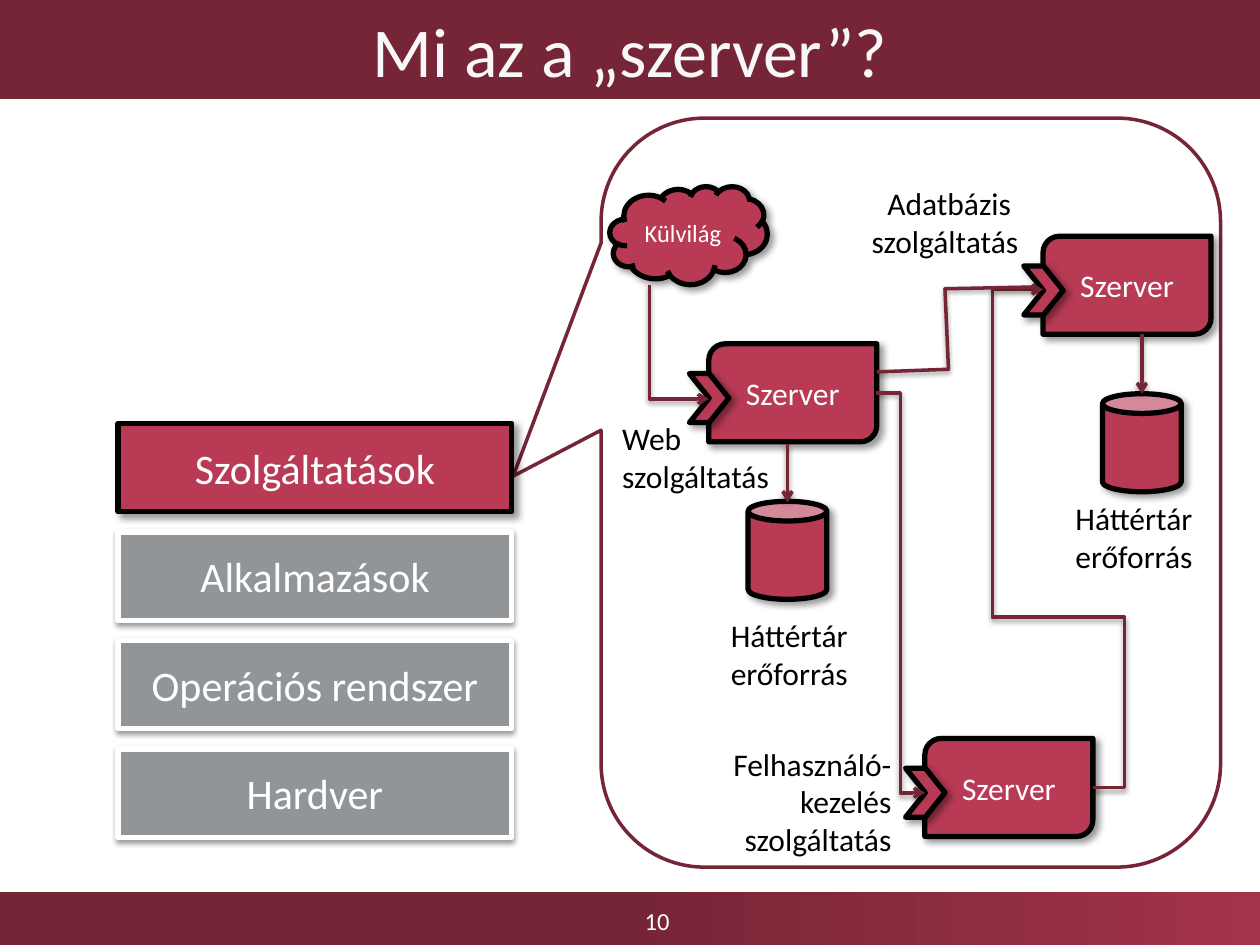
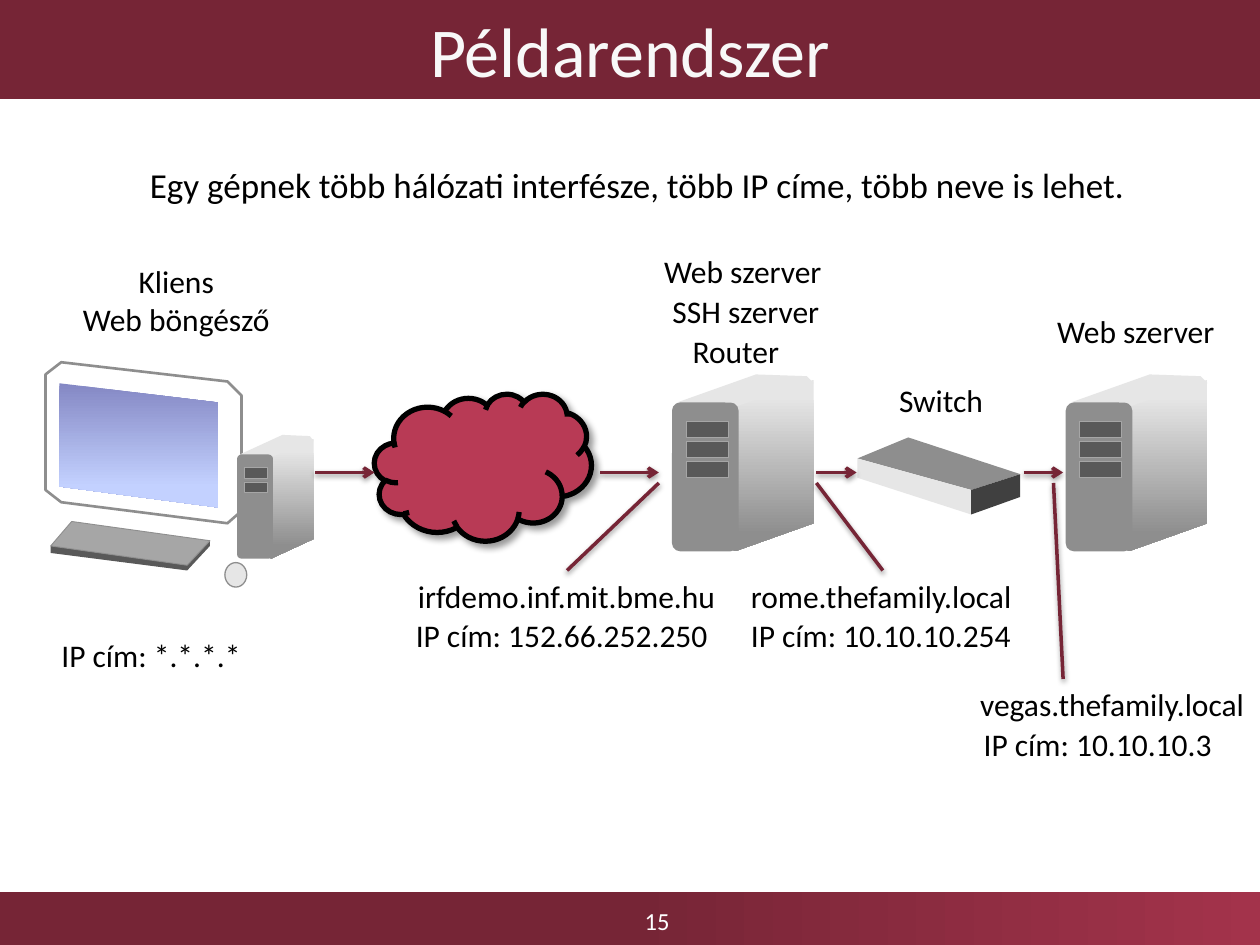
from pptx import Presentation
from pptx.dml.color import RGBColor
from pptx.enum.shapes import MSO_CONNECTOR, MSO_SHAPE
from pptx.enum.text import MSO_ANCHOR, MSO_AUTO_SIZE, PP_ALIGN
from pptx.oxml import parse_xml
from pptx.oxml.ns import nsdecls, qn
from pptx.util import Pt

RECT, ROUND_RECT = MSO_SHAPE.RECTANGLE, MSO_SHAPE.ROUNDED_RECTANGLE
DIAGONAL, CHEVRON = MSO_SHAPE.ROUND_2_DIAG_RECTANGLE, MSO_SHAPE.CHEVRON
CAN, CLOUD, OVAL = MSO_SHAPE.CAN, MSO_SHAPE.CLOUD, MSO_SHAPE.OVAL
CALLOUT = MSO_SHAPE.ROUNDED_RECTANGULAR_CALLOUT
STRAIGHT, ELBOW = MSO_CONNECTOR.STRAIGHT, MSO_CONNECTOR.ELBOW
LEFT, CENTER, RIGHT = PP_ALIGN.LEFT, PP_ALIGN.CENTER, PP_ALIGN.RIGHT
MIDDLE, GROW = MSO_ANCHOR.MIDDLE, MSO_AUTO_SIZE.SHAPE_TO_FIT_TEXT

WINE = RGBColor(0x76, 0x25, 0x36)
LIGHT_WINE = RGBColor(0xA3, 0x33, 0x4B)
RED = RGBColor(0xB8, 0x3A, 0x55)
BLACK = RGBColor(0, 0, 0)
WHITE = RGBColor(0xFF, 0xFF, 0xFF)
TITLE_WHITE = RGBColor(0xF8, 0xF8, 0xF8)
LAYER_GRAY = RGBColor(0x92, 0x95, 0x98)
PALE_GRAY = RGBColor(0xE6, 0xE6, 0xE6)
MID_GRAY = RGBColor(0xA6, 0xA6, 0xA6)
FACE_GRAY = RGBColor(0x8E, 0x8E, 0x8E)
DARK_GRAY = RGBColor(0x59, 0x59, 0x59)
EDGE_GRAY = RGBColor(0x40, 0x40, 0x40)
SCREEN_TOP = RGBColor(0x84, 0x88, 0xC4)
SCREEN_BOTTOM = RGBColor(0xC3, 0xD1, 0xFF)

# Gradients: colour and position of both stops, and the angle
FOOTER_FILL = {"stops": ((WINE, 0.5), (LIGHT_WINE, 1)), "angle": 0}
SCREEN_FILL = {"stops": ((SCREEN_TOP, 0), (SCREEN_BOTTOM, 0.83)), "angle": 270}
SIDE_FILL = {"stops": ((PALE_GRAY, 0.1), (FACE_GRAY, 0.9)), "angle": 270}

# Shadows: opacity, blur, distance, direction
SHADOW_XML = (f'<a:effectLst {nsdecls("a")}><a:outerShdw blurRad="%d" dist="%d" dir="%d" '
              'rotWithShape="0"><a:srgbClr val="000000"><a:alpha val="%d"/></a:srgbClr>'
              '</a:outerShdw></a:effectLst>')
DEEP_SHADOW = SHADOW_XML % (Pt(4), Pt(3), 45 * 60000, 40000)
SOFT_SHADOW = SHADOW_XML % (Pt(3.1), Pt(1.6), 90 * 60000, 38000)
RED_BOX = {"fill": RED, "line": (BLACK, 3), "shadow": DEEP_SHADOW}
GRAY_BOX = {"fill": LAYER_GRAY, "line": (WHITE, 3), "shadow": SOFT_SHADOW}
FONT = "Calibri"


def place(page, kind, area, fill=None, line=None, shadow=None, text="",
          size=18, color=WHITE, align=CENTER, closed=True):
    """Add a preset shape, a freeform (kind "outline") or a label (kind "label")."""
    if kind == "outline":
        corners = [(Pt(x), Pt(y)) for x, y in area]
        builder = page.shapes.build_freeform(*corners[0])
        builder.add_line_segments(corners[1:], close=closed)
        box = builder.convert_to_shape()
    elif kind == "label":
        box = page.shapes.add_textbox(*map(Pt, area))
    else:
        box = page.shapes.add_shape(kind, *map(Pt, area))

    if fill is None:
        box.fill.background()
    elif isinstance(fill, RGBColor):
        box.fill.solid()
        box.fill.fore_color.rgb = fill
    else:
        box.fill.gradient()
        box.fill.gradient_angle = fill["angle"]
        for stop, (tone, position) in zip(box.fill.gradient_stops, fill["stops"]):
            stop.color.rgb, stop.position = tone, position
    if line:
        box.line.color.rgb, box.line.width = line[0], Pt(line[1])
    else:
        box.line.fill.background()
    if shadow:
        box._element.spPr.append(parse_xml(shadow))
    else:
        box.shadow.inherit = False

    if text:
        frame = box.text_frame
        if kind == "label":
            frame.word_wrap, frame.auto_size = False, GROW
        else:
            frame.word_wrap, frame.vertical_anchor = True, MIDDLE
        for number, words in enumerate(text.split("\n")):
            para = frame.add_paragraph() if number else frame.paragraphs[0]
            para.text, para.alignment = words, align
            for span in para.runs:
                for name, value in {"name": FONT, "size": Pt(size)}.items():
                    setattr(span.font, name, value)
                span.font.color.rgb = color
    return box


def link(page, kind, start, end, arrow=True):
    """Add a shadowed connector, with an arrowhead at its end if wanted."""
    connector = page.shapes.add_connector(kind, *map(Pt, start + end))
    connector.line.color.rgb, connector.line.width = WINE, Pt(2)
    properties = connector._element.spPr
    if arrow:
        properties.find(qn("a:ln")).append(
            parse_xml(f'<a:tailEnd {nsdecls("a")} type="arrow"/>'))
    properties.append(parse_xml(SOFT_SHADOW))
    return properties


deck = Presentation()
deck.slide_width, deck.slide_height = Pt(720), Pt(540)

# Shared bands, titles and page numbers
pages = []
for title, number in (("Mi az a „szerver”?", "10"), ("Példarendszer", "15")):
    page = deck.slides.add_slide(deck.slide_layouts[6])
    place(page, RECT, (0, 510, 720, 30), FOOTER_FILL)
    place(page, RECT, (258.5, 512, 234, 28), text=number, size=14)
    place(page, RECT, (0, 0, 720, 56.5), WINE, text=title, size=40, color=TITLE_WHITE)
    pages.append(page)
server_page, example_page = pages

# Callout that opens from the services layer
callout = place(server_page, CALLOUT, (343.5, 67.5, 354, 428), WHITE, (WINE, 2))
for index, value in enumerate((-0.642, -0.022, 0.167)):
    callout.adjustments[index] = value

# Layer stack
layers = ("Szolgáltatások", "Alkalmazások", "Operációs rendszer", "Hardver")
for row, layer in enumerate(layers):
    style = GRAY_BOX if row else RED_BOX
    place(server_page, RECT, (67.5, 242 + 62 * row, 225, 50.5), text=layer, size=24, **style)

# Servers with their service ports, and the storage cans
for left, top in ((405, 196.5), (596, 135), (528.5, 422)):
    place(server_page, DIAGONAL, (left, top, 96, 56), text="Szerver", **RED_BOX)
    place(server_page, CHEVRON, (left - 11, top + 17, 22.5, 28), **RED_BOX)
for left, top in ((427.5, 286.5), (630, 225)):
    place(server_page, CAN, (left, top, 45, 56), **RED_BOX)
place(server_page, CLOUD, (348.5, 106.5, 90, 56), text="Külvilág", size=14, **RED_BOX)

# Storage arrows and routes between servers
link(server_page, STRAIGHT, (652.5, 191), (652.5, 225))
link(server_page, STRAIGHT, (450, 253.5), (450, 287))
link(server_page, ELBOW, (500.5, 224.5), (528.5, 453))

cloud_route = link(server_page, ELBOW, (420.5, 178.5), (355.5, 212.5))
cloud_route.find(qn("a:xfrm")).set("rot", str(270 * 60000))
cloud_route.find(qn("a:prstGeom")).set("prst", "bentConnector2")

return_route = link(server_page, ELBOW, (624.5, 450), (596, 165.5))
geometry = return_route.find(qn("a:prstGeom"))
geometry.set("prst", "bentConnector5")
for old_guides in geometry.findall(qn("a:avLst")):
    geometry.remove(old_guides)
guides = "".join(f'<a:gd name="adj{index}" fmla="val {value}"/>'
                 for index, value in enumerate((-64000, 34200, 201500), 1))
geometry.append(parse_xml(f'<a:avLst {nsdecls("a")}>{guides}</a:avLst>'))

place(server_page, "outline", [(501, 212.5), (542, 211), (540, 165), (590.5, 164)],
      line=(WINE, 2), shadow=SOFT_SHADOW, closed=False)

# Service and resource labels
for area, text, align in (
    ((348.5, 236, 99.5, 51), "Web \vszolgáltatás", LEFT),
    ((489.5, 101.5, 99.5, 51), "Adatbázis \vszolgáltatás", RIGHT),
    ((410.5, 422, 106, 73), "Felhasználó-\nkezelés\nszolgáltatás", RIGHT),
    ((410.5, 348.5, 86.5, 51), "Háttértár \verőforrás", LEFT),
    ((607.5, 281.5, 86.5, 51), "Háttértár \verőforrás", LEFT),
):
    place(server_page, "label", area, text=text, color=BLACK, align=align)

# Client monitor, keyboard and mouse
for outline, fill, line in (
    ([(26, 214), (35, 207), (130, 218), (138, 226),
      (138, 292), (130, 299), (35, 287), (26, 280)], WHITE, (FACE_GRAY, 1.5)),
    ([(34, 219), (125, 230), (125, 290), (34, 278)], SCREEN_FILL, None),
    ([(29, 312), (107, 323), (120, 309), (120, 312), (107, 326), (29, 316)], DARK_GRAY, None),
    ([(41, 298), (120, 309), (107, 323), (29, 312)], MID_GRAY, (FACE_GRAY, 0.5)),
):
    place(example_page, "outline", outline, fill, line)
place(example_page, OVAL, (128.5, 321.5, 12.5, 14), PALE_GRAY, (FACE_GRAY, 0.75))

# Towers, drawn on an 81 by 101 grid and scaled
for left, top, across, down, drives in (
    (384, 214, 1, 1, 3), (609, 214, 1, 1, 3), (135.5, 248.5, 0.54, 0.7, 2),
):
    for outline, fill in (
        ([(3, 16), (48, 0), (77, 1), (81, 5), (38, 22)], PALE_GRAY),
        ([(30, 20), (38, 18), (81, 3), (81, 85), (36, 101), (30, 95)], SIDE_FILL),
    ):
        corners = [(left + x * across, top + y * down) for x, y in outline]
        place(example_page, "outline", corners, fill)
    front = place(example_page, ROUND_RECT,
                  (left, top + 16 * down, 38 * across, 85 * down), FACE_GRAY)
    front.adjustments[0] = 0.12
    for drive in range(drives):
        place(example_page, RECT,
              (left + 8 * across, top + (27 + 11.5 * drive) * down, 24 * across, 9 * down),
              DARK_GRAY, (MID_GRAY, 0.5))

# Network cloud and switch
place(example_page, CLOUD, (214, 225, 124, 84), **RED_BOX)
for outline, fill in (
    ([(490, 262), (519, 250), (583, 271), (555, 280)], FACE_GRAY),
    ([(490, 262), (555, 280), (555, 294), (490, 273)], PALE_GRAY),
    ([(555, 280), (583, 271), (583, 284), (555, 294)], EDGE_GRAY),
):
    place(example_page, "outline", outline, fill)

# Network path, then pointers to the addresses
for start, end in ((180, 214), (343, 376.5), (466.5, 489.5), (585, 607.5)):
    link(example_page, STRAIGHT, (start, 270), (end, 270))
for start, end in (
    ((324, 326), (376.5, 276)), ((466.5, 276), (504.5, 326)), ((607.5, 388), (602, 276)),
):
    link(example_page, STRAIGHT, start, end, arrow=False)

# Machine names and addresses
for area, text, align in (
    ((39.5, 146, 122.5, 51), "Kliens\nWeb böngésző", CENTER),
    ((371.5, 140.5, 106, 29), "Web szerver", CENTER),
    ((376.5, 163.5, 99.5, 29), "SSH szerver", CENTER),
    ((388, 186, 65, 29), "Router", CENTER),
    ((506, 214, 63.5, 29), "Switch", CENTER),
    ((596, 174.5, 106, 29), "Web szerver", CENTER),
    ((230.5, 326, 186.5, 29), "irfdemo.inf.mit.bme.hu", CENTER),
    ((230.5, 348.5, 183, 29), "IP cím: 152.66.252.250", LEFT),
    ((28, 360, 118, 29), "IP cím: *.*.*.*", LEFT),
    ((422, 326, 165, 29), "rome.thefamily.local", LEFT),
    ((422, 348.5, 165, 29), "IP cím: 10.10.10.254", LEFT),
    ((553, 388, 167, 29), "vegas.thefamily.local", LEFT),
    ((555, 410.5, 146, 29), "IP cím: 10.10.10.3", LEFT),
):
    place(example_page, "label", area, text=text, color=BLACK, align=align)
place(example_page, "label", (78.5, 90, 571.5, 31.5), size=20, color=BLACK, align=LEFT,
      text="Egy gépnek több hálózati interfésze, több IP címe, több neve is lehet.")

deck.save("out.pptx")
